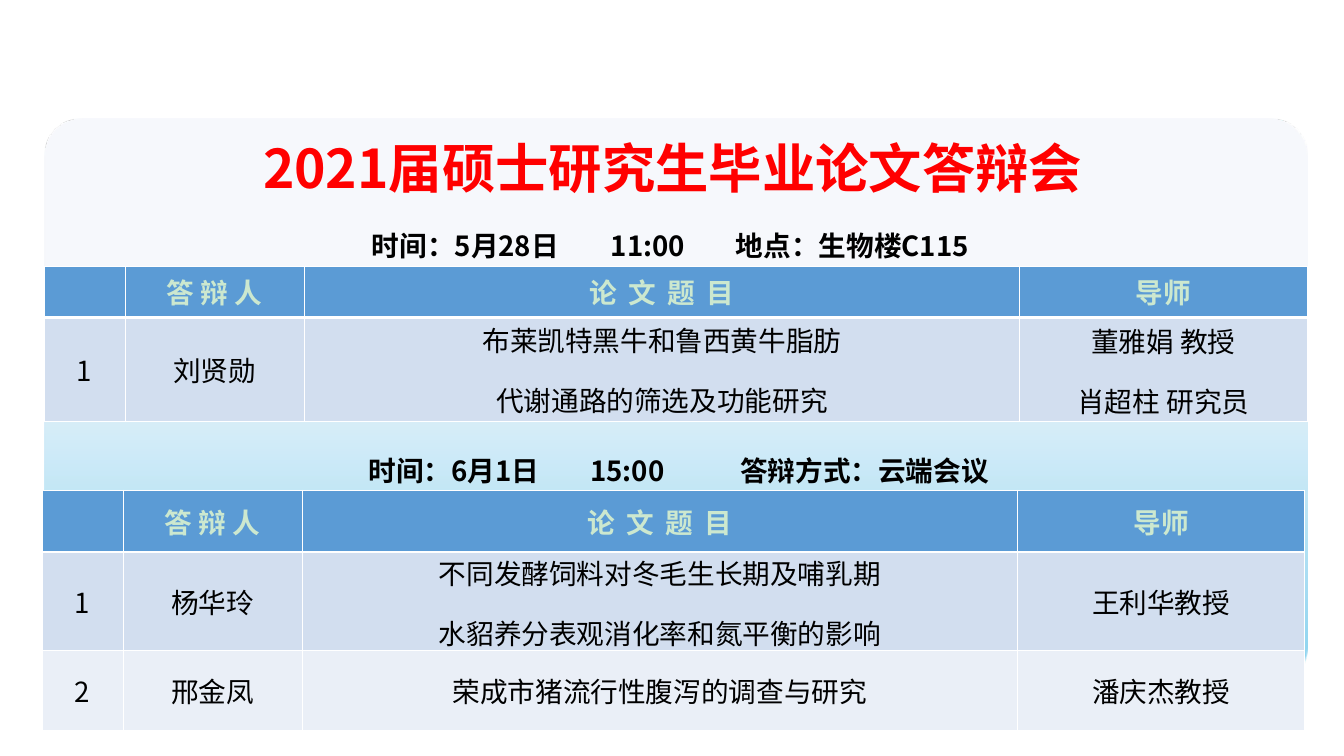
from lxml.etree import SubElement
from pptx import Presentation
from pptx.dml.color import RGBColor
from pptx.enum.shapes import MSO_SHAPE
from pptx.enum.text import MSO_ANCHOR, MSO_AUTO_SIZE, PP_ALIGN
from pptx.oxml import parse_xml
from pptx.oxml.ns import nsdecls, qn
from pptx.util import Inches, Pt

FONT = "Noto Sans CJK SC"
WHITE = RGBColor(0xFF, 0xFF, 0xFF)
BLACK = RGBColor(0, 0, 0)
RED = RGBColor(0xFF, 0, 0)
PALE_GREEN = RGBColor(0xCC, 0xE8, 0xCF)
HEADER_BLUE = RGBColor(0x5B, 0x9B, 0xD5)
BANDS = [RGBColor(0xEA, 0xEF, 0xF7), RGBColor(0xD2, 0xDE, 0xEF)]
PANEL_TOP = RGBColor(0xF6, 0xF8, 0xFC)
PANEL_BOTTOM = RGBColor(0x87, 0xD2, 0xEF)

presentation = Presentation()
presentation.slide_width = Inches(18.9)
presentation.slide_height = Inches(10.63)
slide = presentation.slides.add_slide(presentation.slide_layouts[5])
slide.background.fill.solid()
slide.background.fill.fore_color.rgb = WHITE

# One percent of the slide's width and height
COLUMN = presentation.slide_width / 100
ROW = presentation.slide_height / 100


def box(left, top, width, height):
    """Turn percentages of the slide into a position and size."""
    return [int(left * COLUMN), int(top * ROW), int(width * COLUMN), int(height * ROW)]


def format_runs(paragraph, size, color, bold):
    for run in paragraph.runs:
        run.font.size = Pt(size)
        run.font.bold = bold
        run.font.color.rgb = color
        run.font.name = FONT
        SubElement(run.font._element, qn("a:ea"), typeface=FONT)


# Rounded panel behind everything
panel = slide.shapes.add_shape(MSO_SHAPE.ROUNDED_RECTANGLE, *box(3.28, 15.62, 93.97, 74.88))
panel.adjustments[0] = 0.07
panel.shadow.inherit = False
panel.line.fill.background()
panel.fill.gradient()
panel.fill.gradient_angle = 270
upper, lower = panel.fill.gradient_stops
upper.color.rgb, upper.position = PANEL_TOP, 0.33
lower.color.rgb, lower.position = PANEL_BOTTOM, 1
first_color = next(panel._element.iter(qn("a:srgbClr")))
SubElement(first_color, qn("a:alpha"), val="89000")
slide.shapes._spTree.insert(2, panel._element)

# Title
title = slide.shapes.title
title.left, title.top, title.width, title.height = box(3.12, 16.09, 93.86, 13.08)
title.text_frame.text = "2021届硕士研究生毕业论文答辩会"
title.text_frame.auto_size = MSO_AUTO_SIZE.NONE
title.text_frame.vertical_anchor = MSO_ANCHOR.MIDDLE
heading = title.text_frame.paragraphs[0]
heading.alignment = PP_ALIGN.CENTER
heading.line_spacing = 0.9
format_runs(heading, 54, RED, True)

# Session lines: left, top, indent, tab stops, text
sessions = [
    (2.91, 27.56, 24.76, (17.78, 27.09), "时间：5月28日\t11:00\t地点：生物楼C115"),
    (3.28, 57.38, 24.13, (16.51, 27.67), "时间：6月1日\t15:00\t答辩方式：云端会议"),
]
for left, top, indent, stops, text in sessions:
    session = slide.shapes.add_textbox(*box(left, top, 94.39, 7.62))
    session.text_frame.word_wrap = True
    session.text_frame.margin_left = int(indent * COLUMN)
    session.text_frame.text = text
    paragraph = session.text_frame.paragraphs[0]
    paragraph.alignment = PP_ALIGN.LEFT
    paragraph.line_spacing = 1.5
    tab_list = SubElement(paragraph._p.get_or_add_pPr(), qn("a:tabLst"))
    for stop in stops:
        SubElement(tab_list, qn("a:tab"), pos=str(int(stop * COLUMN)), algn="l")
    format_runs(paragraph, 28, BLACK, True)

# Defence tables: left, top, row heights, rows below the header
HEADER = ["", "答 辩 人", "论 文 题 目", "导师"]
COLUMN_SHARES = [6.03, 13.33, 53.23, 21.38]
defences = [
    (3.28, 35.28, [6.68, 13.83], [
        ["1", "刘贤勋", "布莱凯特黑牛和鲁西黄牛脂肪\n代谢通路的筛选及功能研究",
         "董雅娟 教授\n肖超柱 研究员"],
    ]),
    (3.12, 64.82, [8.18, 13.08, 10.54], [
        ["1", "杨华玲", "不同发酵饲料对冬毛生长期及哺乳期\n水貂养分表观消化率和氮平衡的影响",
         "王利华教授"],
        ["2", "邢金凤", "荣成市猪流行性腹泻的调查与研究", "潘庆杰教授"],
    ]),
]
for left, top, heights, body in defences:
    frame = slide.shapes.add_table(
        len(heights), len(HEADER), *box(left, top, sum(COLUMN_SHARES), sum(heights)))
    table = frame.table
    for column, share in zip(table.columns, COLUMN_SHARES):
        column.width = int(share * COLUMN)
    for row, height in zip(table.rows, heights):
        row.height = int(height * ROW)

    for row_index, texts in enumerate([HEADER] + body):
        is_header = row_index == 0
        for column_index, text in enumerate(texts):
            cell = table.cell(row_index, column_index)
            cell.fill.solid()
            cell.fill.fore_color.rgb = HEADER_BLUE if is_header else BANDS[row_index % 2]
            cell.vertical_anchor = MSO_ANCHOR.MIDDLE
            if column_index == 2 and not is_header:
                cell.margin_left = cell.margin_right = cell.margin_top = Inches(0.01)
                cell.margin_bottom = 0
            cell.text_frame.text = text
            for number, paragraph in enumerate(cell.text_frame.paragraphs):
                paragraph.alignment = PP_ALIGN.CENTER
                if number > 0:
                    paragraph.line_spacing = 1.5
                format_runs(paragraph, 28, PALE_GREEN if is_header else BLACK, is_header)

            # Thin borders, with a thick rule under the header
            widths = {"L": 1, "R": 1, "T": 3 if row_index == 1 else 1, "B": 3 if is_header else 1}
            for position, (side, width) in enumerate(widths.items()):
                border = parse_xml(
                    f'<a:ln{side} {nsdecls("a")} w="{int(Pt(width))}"><a:solidFill>'
                    f'<a:srgbClr val="{WHITE}"/></a:solidFill></a:ln{side}>')
                cell._tc.get_or_add_tcPr().insert(position, border)

    # Spread the letters of the topic heading
    table.cell(0, 2).text_frame.paragraphs[0].runs[0].font._element.set("spc", "270")

presentation.save("out.pptx")
